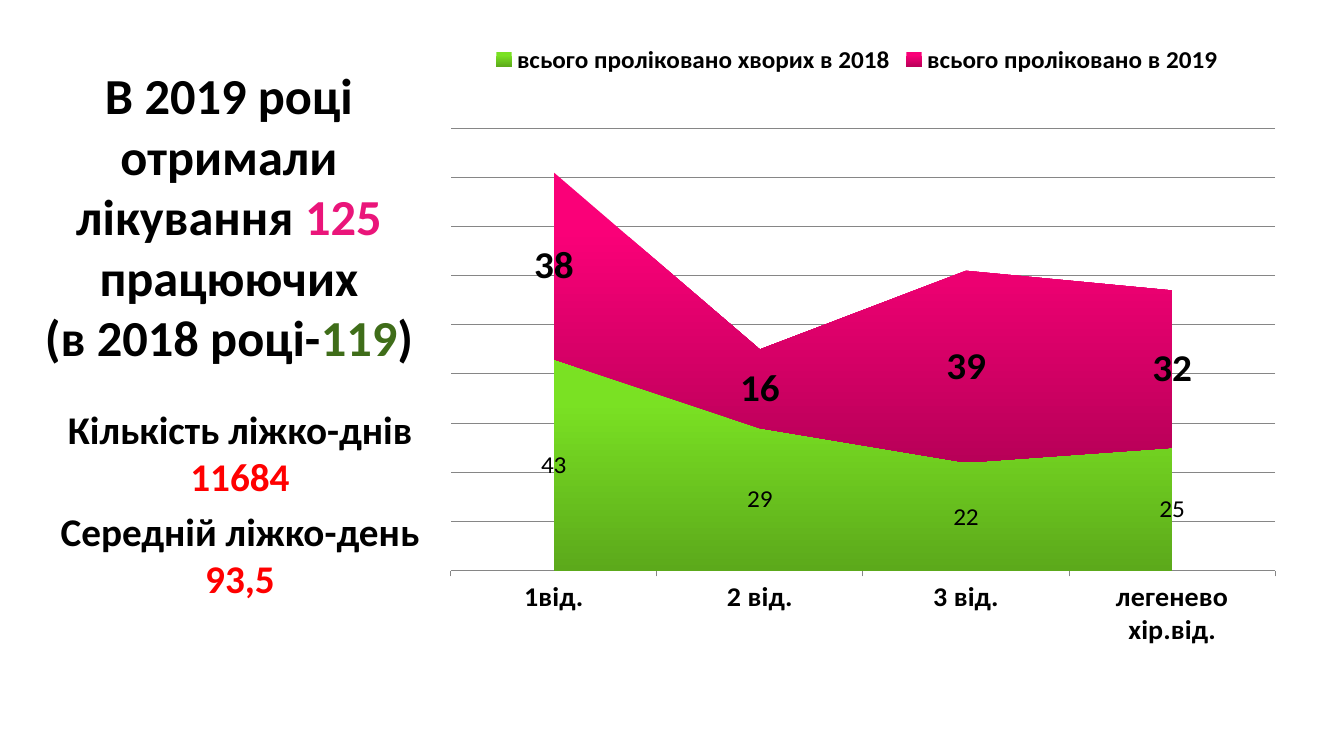
from lxml import etree
from pptx import Presentation
from pptx.chart.data import CategoryChartData
from pptx.dml.color import RGBColor
from pptx.enum.chart import XL_CHART_TYPE, XL_LEGEND_POSITION, XL_TICK_LABEL_POSITION, XL_TICK_MARK
from pptx.enum.text import MSO_ANCHOR, MSO_AUTO_SIZE, PP_ALIGN
from pptx.oxml.ns import qn
from pptx.util import Pt

AREA_STACKED = XL_CHART_TYPE.AREA_STACKED
LEGEND_TOP = XL_LEGEND_POSITION.TOP
LABELS_LOW = XL_TICK_LABEL_POSITION.LOW
TICK_OUT, TICK_NONE = XL_TICK_MARK.OUTSIDE, XL_TICK_MARK.NONE
BOTTOM, TOP = MSO_ANCHOR.BOTTOM, MSO_ANCHOR.TOP
NO_FIT = MSO_AUTO_SIZE.NONE
CENTER = PP_ALIGN.CENTER

FONT = "Calibri"
BLACK, PINK, GREEN, RED, GREY = "000000", "EA157A", "3F6D19", "FF0000", "868686"
EMU_PER_PX = 914400 / 100.8

SLIDE_SIZE = (1344, 756)
HEADLINE_BOX = (34, 45, 390, 327)
BED_DAYS_BOX = (22, 400, 436, 226)
CHART_BOX = (423, 33, 868, 614)
PLOT_AREA = {"x": 0.032, "y": 0.161, "w": 0.95, "h": 0.748}

HEADLINE = [[
    ("В 2019 році отримали лікування ", BLACK),
    ("125 ", PINK),
    ("працюючих", BLACK),
    ("\n", BLACK),
    ("(в 2018 році-", BLACK),
    ("119", GREEN),
    (")", BLACK),
]]
BED_DAYS = [
    [("Кількість ліжко-днів ", BLACK), ("11684", RED)],
    [("Середній ліжко-день ", BLACK), ("93,5", RED)],
]
DEPARTMENTS = ["1від.", "2 від.", "3 від.", "легенево хір.від."]
TREATED = [
    ("всього проліковано хворих в 2018", (43, 29, 22, 25), ("7AE123", "5CA91B"), 18, False),
    ("всього проліковано в 2019", (38, 16, 39, 32), ("FA0078", "B80058"), 28, True),
]


def px(length):
    return round(length * EMU_PER_PX)


def rgb(color):
    return RGBColor.from_string(color)


def style(font, size, bold, color=BLACK):
    font.name, font.size, font.bold = FONT, Pt(size), bold
    font.color.rgb = rgb(color)


def write(frame, paragraphs, size, anchor, space_before):
    frame.word_wrap = True
    frame.auto_size = NO_FIT
    frame.vertical_anchor = anchor
    for index, pieces in enumerate(paragraphs):
        paragraph = frame.add_paragraph() if index else frame.paragraphs[0]
        paragraph.alignment = CENTER
        paragraph.line_spacing = 1.0
        paragraph.space_before = Pt(space_before)
        for text, color in pieces:
            if text == "\n":
                paragraph.add_line_break()
                continue
            run = paragraph.add_run()
            run.text = text
            style(run.font, size, True, color)


def place_plot(chart):
    plot_area = chart._chartSpace.chart.plotArea
    for layout in plot_area.findall(qn("c:layout")):
        plot_area.remove(layout)
    layout = etree.Element(qn("c:layout"))
    manual = etree.SubElement(layout, qn("c:manualLayout"))
    settings = {"layoutTarget": "inner", "xMode": "edge", "yMode": "edge", **PLOT_AREA}
    for tag, value in settings.items():
        etree.SubElement(manual, qn("c:" + tag)).set("val", str(value))
    plot_area.insert(0, layout)
    for crossing in plot_area.iter(qn("c:crossBetween")):
        crossing.set("val", "between")


def add_treated_chart(slide):
    data = CategoryChartData()
    data.categories = DEPARTMENTS
    for name, values, *_ in TREATED:
        data.add_series(name, values)
    chart = slide.shapes.add_chart(AREA_STACKED, *map(px, CHART_BOX), data).chart
    style(chart.font, 18, False)
    chart.has_title = False
    chart.has_legend = True
    chart.legend.position = LEGEND_TOP
    chart.legend.include_in_layout = False
    style(chart.legend.font, 18, True)

    departments = chart.category_axis
    departments.major_tick_mark = TICK_OUT
    departments.minor_tick_mark = TICK_NONE
    departments.tick_label_position = LABELS_LOW
    departments.has_major_gridlines = False
    departments.format.line.color.rgb = rgb(GREY)
    style(departments.tick_labels.font, 20, True)

    patients = chart.value_axis
    patients.minimum_scale, patients.maximum_scale, patients.major_unit = 0, 90, 10
    patients.has_major_gridlines = True
    patients.major_gridlines.format.line.color.rgb = rgb(GREY)
    patients.visible = False

    for series, (_, _, shades, size, bold) in zip(chart.plots[0].series, TREATED):
        fill = series.format.fill
        fill.gradient()
        fill.gradient_angle = 270
        for stop, shade, position in zip(fill.gradient_stops, shades, (0.2, 1)):
            stop.color.rgb = rgb(shade)
            stop.position = position
        series.format.line.fill.background()
        series.data_labels.show_value = True
        style(series.data_labels.font, size, bold)
    place_plot(chart)


def main():
    deck = Presentation()
    deck.slide_width, deck.slide_height = map(px, SLIDE_SIZE)
    slide = deck.slides.add_slide(deck.slide_layouts[5])
    headline = slide.shapes.title
    headline.left, headline.top, headline.width, headline.height = map(px, HEADLINE_BOX)
    write(headline.text_frame, HEADLINE, 36, BOTTOM, 0)
    bed_days = slide.shapes.add_textbox(*map(px, BED_DAYS_BOX))
    write(bed_days.text_frame, BED_DAYS, 28, TOP, 5.6)
    add_treated_chart(slide)
    deck.save("out.pptx")


if __name__ == "__main__":
    main()
